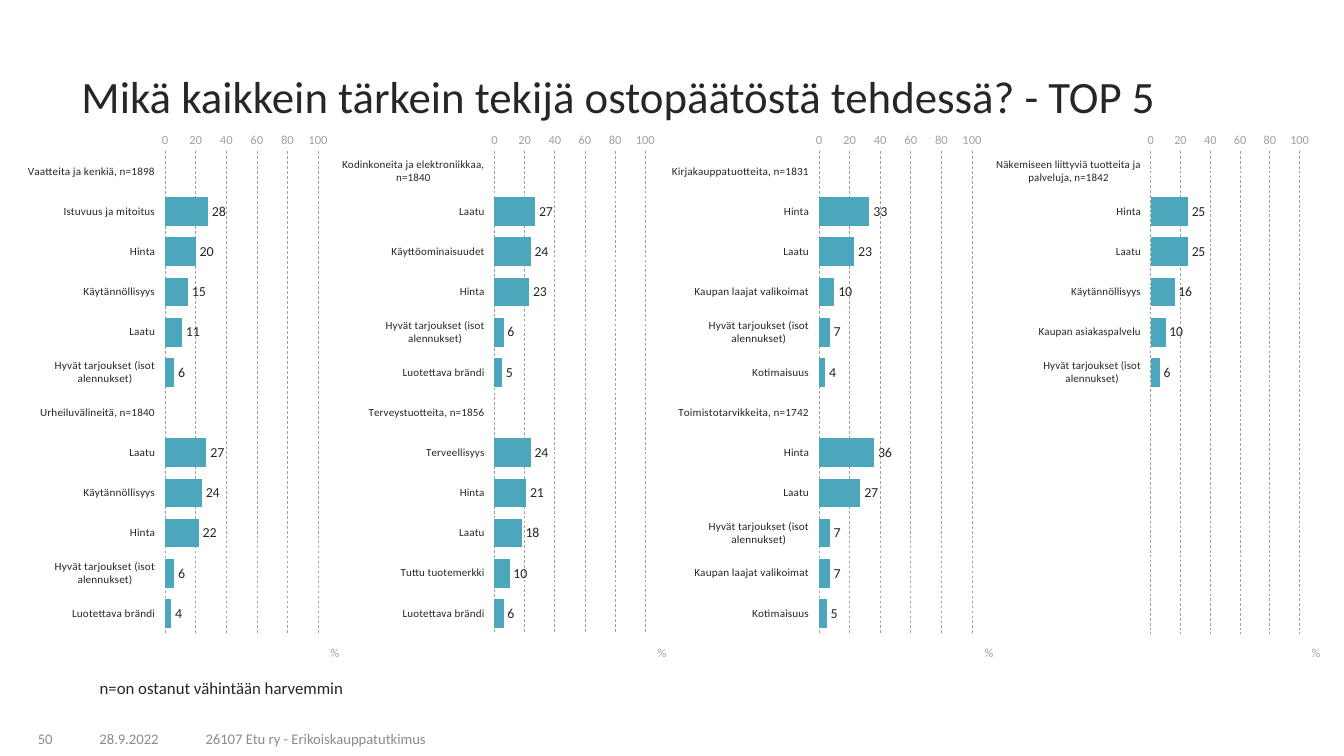
from lxml import etree
from pptx import Presentation
from pptx.chart.data import CategoryChartData
from pptx.dml.color import RGBColor
from pptx.enum.chart import (XL_AXIS_CROSSES, XL_CHART_TYPE, XL_LABEL_POSITION,
                             XL_TICK_LABEL_POSITION, XL_TICK_MARK)
from pptx.enum.dml import MSO_LINE
from pptx.enum.text import MSO_ANCHOR, PP_ALIGN
from pptx.oxml.ns import qn
from pptx.util import Inches, Pt

BAR = XL_CHART_TYPE.BAR_CLUSTERED
OUTSIDE_END = XL_LABEL_POSITION.OUTSIDE_END
LOW = XL_TICK_LABEL_POSITION.LOW
AT_MAXIMUM = XL_AXIS_CROSSES.MAXIMUM
NO_TICK = XL_TICK_MARK.NONE
DASH = MSO_LINE.DASH
TOP, MIDDLE, BOTTOM = MSO_ANCHOR.TOP, MSO_ANCHOR.MIDDLE, MSO_ANCHOR.BOTTOM
LEFT, CENTER, RIGHT = PP_ALIGN.LEFT, PP_ALIGN.CENTER, PP_ALIGN.RIGHT

INK = RGBColor(0x26, 0x26, 0x26)
FOOTER_GRAY = RGBColor(0x8C, 0x8C, 0x8C)
AXIS_GRAY = RGBColor(0xA0, 0xA0, 0xA0)
TEAL = RGBColor(0x4D, 0xA7, 0xBC)

OFFERS = "Hyvät tarjoukset (isot alennukset)"
BRAND = "Luotettava brändi"
RANGE = "Kaupan laajat valikoimat"
ROWS = 12

COLUMNS = [
    [
        ("Vaatteita ja kenkiä, n=1898", None), ("Istuvuus ja mitoitus", 28),
        ("Hinta", 20), ("Käytännöllisyys", 15), ("Laatu", 11), (OFFERS, 6),
        ("Urheiluvälineitä, n=1840", None), ("Laatu", 27),
        ("Käytännöllisyys", 24), ("Hinta", 22), (OFFERS, 6), (BRAND, 4),
    ],
    [
        ("Kodinkoneita ja elektroniikkaa, n=1840", None), ("Laatu", 27),
        ("Käyttöominaisuudet", 24), ("Hinta", 23), (OFFERS, 6), (BRAND, 5),
        ("Terveystuotteita, n=1856", None), ("Terveellisyys", 24),
        ("Hinta", 21), ("Laatu", 18), ("Tuttu tuotemerkki", 10), (BRAND, 6),
    ],
    [
        ("Kirjakauppatuotteita, n=1831", None), ("Hinta", 33), ("Laatu", 23),
        (RANGE, 10), (OFFERS, 7), ("Kotimaisuus", 4),
        ("Toimistotarvikkeita, n=1742", None), ("Hinta", 36), ("Laatu", 27),
        (OFFERS, 7), (RANGE, 7), ("Kotimaisuus", 5),
    ],
    [
        ("Näkemiseen liittyviä tuotteita ja palveluja, n=1842", None),
        ("Hinta", 25), ("Laatu", 25), ("Käytännöllisyys", 16),
        ("Kaupan asiakaspalvelu", 10), (OFFERS, 6),
    ],
]


def place(parent, index, **settings):
    for old in parent.findall(qn("c:layout")):
        parent.remove(old)
    layout = etree.Element(qn("c:layout"))
    manual = etree.SubElement(layout, qn("c:manualLayout"))
    for tag, value in settings.items():
        etree.SubElement(manual, qn(f"c:{tag}")).set("val", str(value))
    parent.insert(index, layout)


class SurveySlide:
    font_name = "Calibri"

    def __init__(self, slide):
        self.slide = slide

    def style(self, font, size, color):
        font.name = self.font_name
        font.size = Pt(size)
        font.color.rgb = color

    def text(self, words, box, size, color=INK, align=LEFT, anchor=TOP, spacing=1.0):
        frame = self.slide.shapes.add_textbox(*map(Inches, box)).text_frame
        frame.word_wrap = True
        frame.vertical_anchor = anchor
        paragraph = frame.paragraphs[0]
        paragraph.text = words
        paragraph.alignment = align
        paragraph.line_spacing = spacing
        self.style(paragraph.font, size, color)

    def bars(self, ratings, box):
        rows = ratings + [("", None)] * (ROWS - len(ratings))
        data = CategoryChartData(number_format="General")
        data.categories = [factor for factor, _ in rows]
        data.add_series("Series 1", [share for _, share in rows])
        chart = self.slide.shapes.add_chart(BAR, *map(Inches, box), data).chart
        chart.has_legend = False
        chart.has_title = False
        self.style(chart.font, 12, INK)
        self.plot(chart)
        self.axes(chart)

    def plot(self, chart):
        plot = chart.plots[0]
        plot.gap_width = 40
        plot.vary_by_categories = False
        fill = plot.series[0].format.fill
        fill.solid()
        fill.fore_color.rgb = TEAL
        plot.has_data_labels = True
        labels = plot.data_labels
        labels.show_value = True
        labels.position = OUTSIDE_END
        labels.number_format = "#,##0"
        labels.number_format_is_linked = False
        self.style(labels.font, 10, INK)
        place(chart._chartSpace.chart.plotArea, 0, layoutTarget="inner",
              xMode="edge", yMode="edge", x=0.46, y=0.018, w=0.469, h=0.929)

    def axes(self, chart):
        factors, percent = chart.category_axis, chart.value_axis
        for axis, size, color in ((factors, 8, INK), (percent, 9, AXIS_GRAY)):
            axis.major_tick_mark = axis.minor_tick_mark = NO_TICK
            axis.format.line.fill.background()
            self.style(axis.tick_labels.font, size, color)
        factors.reverse_order = True
        factors.crosses = AT_MAXIMUM
        factors.tick_label_position = LOW
        factors.has_major_gridlines = False
        percent.minimum_scale, percent.maximum_scale = 0, 100
        percent.major_unit = 20
        percent.has_major_gridlines = True
        grid = percent.major_gridlines.format.line
        grid.color.rgb = AXIS_GRAY
        grid.width = Pt(0.5)
        grid.dash_style = DASH
        unit = percent.axis_title.text_frame.paragraphs[0]
        unit.text = "%"
        self.style(unit.font, 9, AXIS_GRAY)
        unit.font.bold = False
        place(percent.axis_title._element, 1, xMode="edge", yMode="edge",
              x=0.96, y=0.964)


def main():
    deck = Presentation()
    deck.slide_width, deck.slide_height = Inches(13.33), Inches(7.5)
    survey = SurveySlide(deck.slides.add_slide(deck.slide_layouts[6]))
    footers = [
        ("28.9.2022", 0.66, 1.24, CENTER),
        ("26107 Etu ry - Erikoiskauppatutkimus", 1.94, 5.92, LEFT),
        ("50", 0.03, 0.59, RIGHT),
    ]
    for words, left, width, align in footers:
        survey.text(words, (left, 7.16, width, 0.3), 10.5, FOOTER_GRAY, align, BOTTOM)
    survey.text("Mikä kaikkein tärkein tekijä ostopäätöstä tehdessä? - TOP 5",
                (0.71, 0.64, 12.07, 0.68), 32, anchor=MIDDLE, spacing=0.9)
    for index, ratings in enumerate(COLUMNS):
        survey.bars(ratings, (0.15 + 3.243 * index, 1.32, 3.24, 5.27))
    survey.text("n=on ostanut vähintään harvemmin", (0.89, 6.7, 3.36, 0.28), 12,
                spacing=0.9)
    deck.save("out.pptx")


if __name__ == "__main__":
    main()
